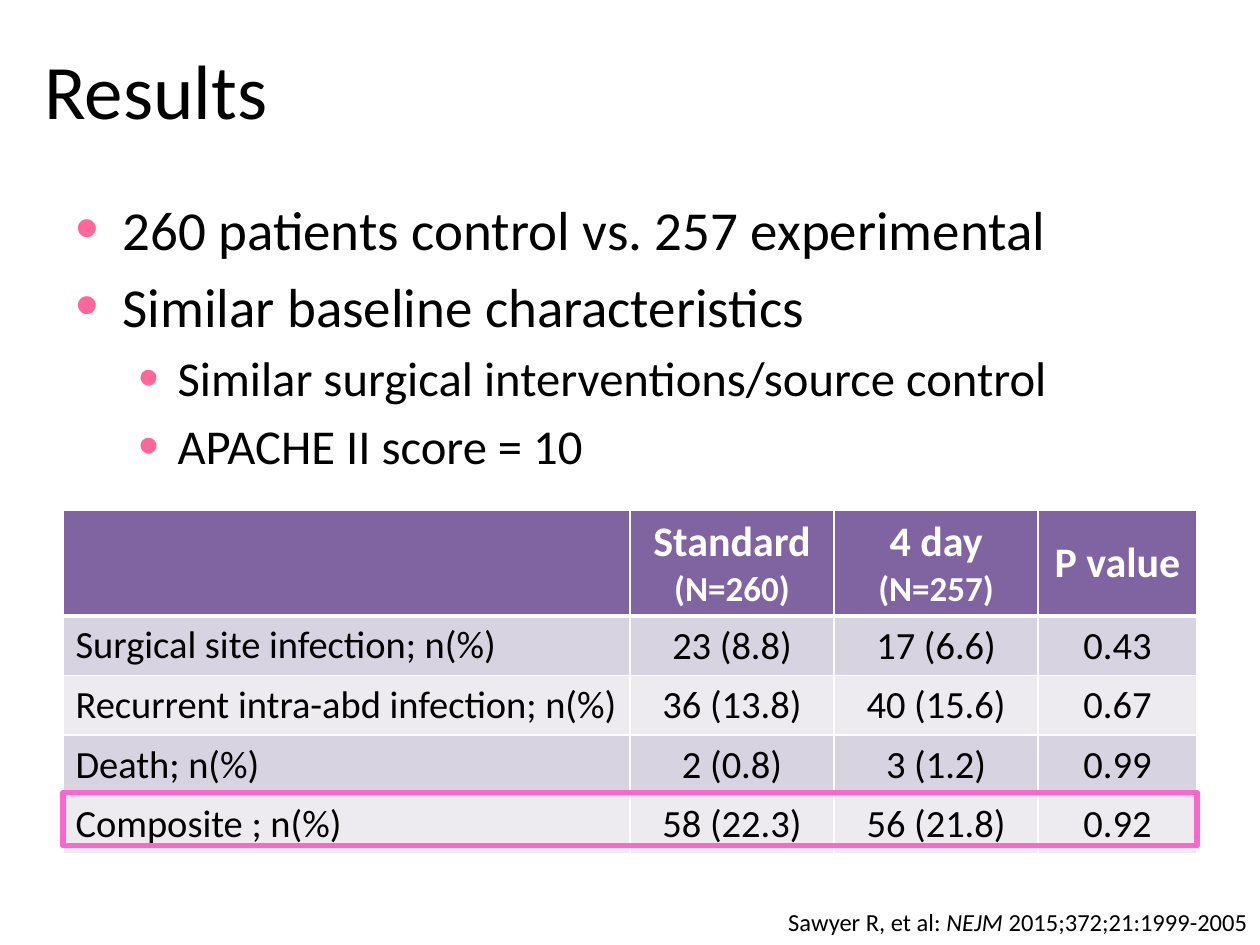
from lxml.etree import SubElement
from pptx import Presentation
from pptx.dml.color import RGBColor
from pptx.enum.shapes import MSO_SHAPE
from pptx.enum.text import MSO_ANCHOR, MSO_AUTO_SIZE, PP_ALIGN
from pptx.oxml.ns import qn
from pptx.util import Cm, Pt

BLACK = RGBColor(0x00, 0x00, 0x00)
WHITE = RGBColor(0xFF, 0xFF, 0xFF)
PURPLE = RGBColor(0x80, 0x64, 0xA2)
LILAC = RGBColor(0xD8, 0xD3, 0xE0)
PALE = RGBColor(0xED, 0xEA, 0xF0)
ROSE = RGBColor(0xFF, 0x66, 0x99)
PINK = RGBColor(0xFF, 0x66, 0xCC)

POINTS = [
    (0, "260 patients control vs. 257 experimental"),
    (0, "Similar baseline characteristics"),
    (1, "Similar surgical interventions/source control"),
    (1, "APACHE II score = 10"),
]
LEVELS = [(31.4, 0.95, -0.95), (27.8, 2.06, -0.79)]
HEADS = [[], ["Standard", "(N=260)"], ["4 day", "(N=257)"], ["P value"]]
ROWS = [
    ["Surgical site infection; n(%)", "23 (8.8)", "17 (6.6)", "0.43"],
    ["Recurrent intra-abd infection; n(%)", "36 (13.8)", "40 (15.6)", "0.67"],
    ["Death; n(%)", "2 (0.8)", "3 (1.2)", "0.99"],
    ["Composite ; n(%)", "58 (22.3)", "56 (21.8)", "0.92"],
]
WIDTHS = [0.5, 0.18, 0.18, 0.14]


def write(para, text, size=18, color=BLACK, bold=False, italic=False,
          align=PP_ALIGN.LEFT):
    para.alignment = align
    run = para.add_run()
    run.text = text
    font = run.font
    font.name, font.size = "Calibri", Pt(size)
    font.bold, font.italic = bold, italic
    font.color.rgb = color


def next_para(frame, index):
    return frame.add_paragraph() if index else frame.paragraphs[0]


def indent(para, left, first):
    props = para._p.get_or_add_pPr()
    props.set("marL", str(Cm(left)))
    props.set("indent", str(Cm(first)))
    return props


def add_bullet(para, left, first):
    props = indent(para, left, first)
    tint = SubElement(props, qn("a:buClr"))
    SubElement(tint, qn("a:srgbClr"), val=str(ROSE))
    SubElement(props, qn("a:buSzPct"), val="120000")
    SubElement(props, qn("a:buFont"), typeface="Arial")
    SubElement(props, qn("a:buChar"), char="•")


def add_title(slide, left, top, width, height):
    title = slide.shapes.title
    title.left, title.top = Cm(left), Cm(top)
    title.width, title.height = Cm(width), Cm(height)
    frame = title.text_frame
    frame.vertical_anchor = MSO_ANCHOR.MIDDLE
    para = frame.paragraphs[0]
    indent(para, 0.64, 0)
    write(para, "Results", size=44)


def add_points(slide, left, top, width, height):
    box = slide.shapes.add_textbox(Cm(left), Cm(top), Cm(width), Cm(height))
    frame = box.text_frame
    frame.word_wrap = True
    for index, (level, text) in enumerate(POINTS):
        para = next_para(frame, index)
        size, inset, first = LEVELS[level]
        para.level = level
        add_bullet(para, inset, first)
        if index:
            para.space_before = Pt(size * 0.2)
        write(para, text, size=size)


def style_cell(cell, fill, base=1):
    cell.fill.solid()
    cell.fill.fore_color.rgb = fill
    props = cell._tc.get_or_add_tcPr()
    for index, side in enumerate(["lnL", "lnR", "lnT", "lnB"]):
        points = base if side == "lnB" else 1
        line = SubElement(props, qn(f"a:{side}"), w=str(Pt(points)))
        solid = SubElement(line, qn("a:solidFill"))
        SubElement(solid, qn("a:srgbClr"), val=str(WHITE))
        props.remove(line)
        props.insert(index, line)


def add_results(slide, left, top, width, head, row):
    count = len(ROWS)
    table = slide.shapes.add_table(
        count + 1, len(WIDTHS), Cm(left), Cm(top), Cm(width),
        Cm(head + count * row)).table
    for column, share in zip(table.columns, WIDTHS):
        column.width = Cm(width * share)
    for index, line in enumerate(table.rows):
        line.height = Cm(row if index else head)

    for col, lines in enumerate(HEADS):
        cell = table.cell(0, col)
        style_cell(cell, PURPLE, base=3)
        cell.vertical_anchor = MSO_ANCHOR.MIDDLE
        for index, text in enumerate(lines):
            write(next_para(cell.text_frame, index), text,
                  size=20 if index else 24, color=WHITE, bold=True,
                  align=PP_ALIGN.CENTER)

    for index, values in enumerate(ROWS):
        for col, text in enumerate(values):
            cell = table.cell(index + 1, col)
            style_cell(cell, PALE if index % 2 else LILAC)
            if col:
                cell.vertical_anchor = MSO_ANCHOR.MIDDLE
            write(cell.text_frame.paragraphs[0], text, size=22,
                  align=PP_ALIGN.CENTER if col else PP_ALIGN.LEFT)


def add_source(slide, left, top, width, height):
    box = slide.shapes.add_textbox(Cm(left), Cm(top), Cm(width), Cm(height))
    frame = box.text_frame
    frame.word_wrap = False
    frame.auto_size = MSO_AUTO_SIZE.SHAPE_TO_FIT_TEXT
    frame.vertical_anchor = MSO_ANCHOR.MIDDLE
    para = frame.paragraphs[0]
    for text, slant in [("Sawyer R, et al: ", False), ("NEJM", True),
                        (" 2015;372;21:1999-2005", False)]:
        write(para, text, size=14, italic=slant, align=PP_ALIGN.RIGHT)


def add_frame(slide, left, top, width, height):
    frame = slide.shapes.add_shape(
        MSO_SHAPE.RECTANGLE, Cm(left), Cm(top), Cm(width), Cm(height))
    frame.shadow.inherit = False
    frame.fill.background()
    frame.line.color.rgb = PINK
    frame.line.width = Pt(3)


def main():
    deck = Presentation()
    deck.slide_width, deck.slide_height = Cm(25.4), Cm(19.05)
    slide = deck.slides.add_slide(deck.slide_layouts[5])
    add_title(slide, 0, 0.2, 22.86, 3.18)
    add_points(slide, 1.27, 3.81, 22.86, 5.92)
    add_results(slide, 1.27, 10.29, 22.86, head=2.13, row=1.2)
    add_source(slide, 15.54, 18.16, 9.86, 0.86)
    add_frame(slide, 1.27, 15.98, 22.86, 1.07)
    deck.save("out.pptx")


if __name__ == "__main__":
    main()
